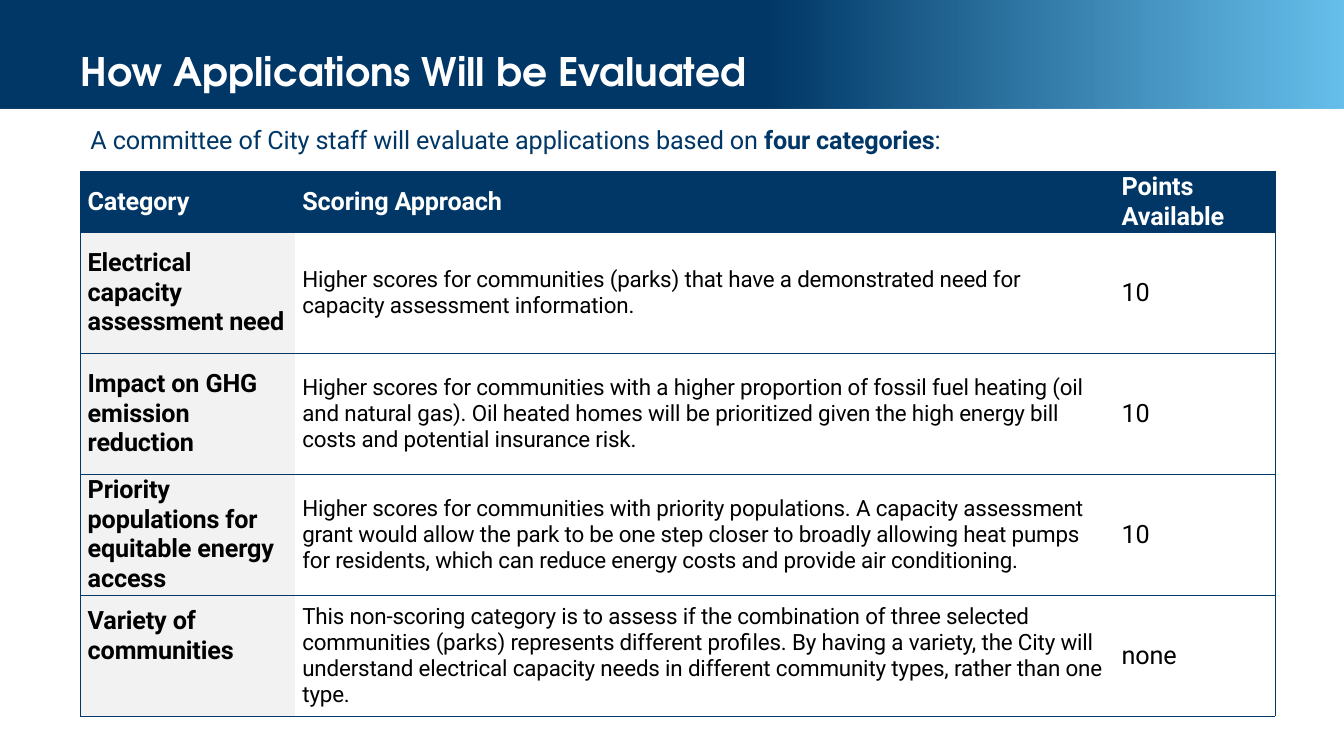
import pptx
import pptx.dml.color
import pptx.enum.shapes
import pptx.enum.text
import pptx.oxml
import pptx.oxml.ns
import pptx.util
from lxml import etree

Cm = pptx.util.Cm
Pt = pptx.util.Pt
RGBColor = pptx.dml.color.RGBColor
MIDDLE = pptx.enum.text.MSO_ANCHOR.MIDDLE
LEFT = pptx.enum.text.PP_ALIGN.LEFT

NAVY = RGBColor(0x01, 0x37, 0x66)
SKY = RGBColor(0x57, 0xB9, 0xE9)
GREY = RGBColor(0xF2, 0xF2, 0xF2)
WHITE = RGBColor(0xFF, 0xFF, 0xFF)
BLACK = RGBColor(0, 0, 0)

HEADERS = ["Category", "Scoring Approach", "Points Available"]
CRITERIA = [
    ("Electrical capacity assessment need",
     "Higher scores for communities (parks) that have a demonstrated need for "
     "capacity assessment information.", "10"),
    ("Impact on GHG emission reduction",
     "Higher scores for communities with a higher proportion of fossil fuel heating "
     "(oil and natural gas). Oil heated homes will be prioritized given the high "
     "energy bill costs and potential insurance risk.", "10"),
    ("Priority populations for equitable energy access",
     "Higher scores for communities with priority populations. A capacity assessment "
     "grant would allow the park to be one step closer to broadly allowing heat pumps "
     "for residents, which can reduce energy costs and provide air conditioning.", "10"),
    ("Variety of communities",
     "This non-scoring category is to assess if the combination of three selected "
     "communities (parks) represents different profiles. By having a variety, the City "
     "will understand electrical capacity needs in different community types, rather "
     "than one type.", "none"),
]


class Deck:
    heading_font = "TeX Gyre Adventor"
    body_font = "Roboto"

    def __init__(self):
        self.prs = pptx.Presentation()
        self.prs.slide_width, self.prs.slide_height = Cm(33.87), Cm(19.05)
        self.s = self.prs.slides.add_slide(self.prs.slide_layouts[5])

    def style(self, r, size, color, bold=False):
        r.font.name, r.font.size = self.body_font, Pt(size)
        r.font.color.rgb, r.font.bold = color, bold
        r._r.get_or_add_rPr().set("spc", "-10")

    def banner(self, width, height):
        sp = self.s.shapes.add_shape(
            pptx.enum.shapes.MSO_SHAPE.RECTANGLE, 0, 0, width, height)
        sp.shadow.inherit = False
        sp.line.fill.background()
        sp.fill.gradient()
        sp.fill.gradient_angle = 0
        for stop, position, color in zip(sp.fill.gradient_stops, (0.57, 1), (NAVY, SKY)):
            stop.position, stop.color.rgb = position, color
        last = sp._element.findall(".//" + pptx.oxml.ns.qn("a:srgbClr"))[-1]
        etree.SubElement(last, pptx.oxml.ns.qn("a:alpha"), val="90000")
        # Send behind the title
        self.s.shapes.title._element.addprevious(sp._element)

    def title(self, text, left, top, width, height):
        sp = self.s.shapes.title
        sp.left, sp.top, sp.width, sp.height = left, top, width, height
        tf = sp.text_frame
        tf.text = text
        tf.word_wrap, tf.vertical_anchor = True, MIDDLE
        tf.auto_size = pptx.enum.text.MSO_AUTO_SIZE.NONE
        tf.margin_left = tf.margin_right = 0
        tf.margin_top = tf.margin_bottom = Cm(0.2)
        p = tf.paragraphs[0]
        p.alignment, p.line_spacing = LEFT, 0.9
        font = p.runs[0].font
        font.name, font.size, font.bold = self.heading_font, Pt(28), True
        font.color.rgb = WHITE

    def text(self, parts, left, top, width, height):
        tf = self.s.shapes.add_textbox(left, top, width, height).text_frame
        tf.word_wrap = True
        for text, bold in parts:
            r = tf.paragraphs[0].add_run()
            r.text = text
            self.style(r, 18, NAVY, bold)

    def borders(self, cell, sides):
        """Draw navy rules on the named sides and clear the others."""
        tcPr = cell._tc.get_or_add_tcPr()
        for i, side in enumerate("LRTB"):
            paint = (f'<a:solidFill><a:srgbClr val="{NAVY}"/></a:solidFill>'
                     if side in sides else "<a:noFill/>")
            tcPr.insert(i, pptx.oxml.parse_xml(
                f'<a:ln{side} {pptx.oxml.ns.nsdecls("a")} w="{Pt(0.5)}">'
                f"{paint}</a:ln{side}>"))

    def table(self, rows, left, top, widths, heights):
        tbl = self.s.shapes.add_table(
            len(rows), len(widths), left, top, sum(widths), sum(heights)).table
        tbl.horz_banding = False
        for column, width in zip(tbl.columns, widths):
            column.width = width
        for i, (row, height) in enumerate(zip(rows, heights)):
            tbl.rows[i].height = height
            for j, text in enumerate(row):
                cell = tbl.cell(i, j)
                cell.text, cell.vertical_anchor = text, MIDDLE
                cell.margin_left = cell.margin_right = Cm(0.18)
                cell.margin_top = cell.margin_bottom = 0
                header = i == 0
                self.style(cell.text_frame.paragraphs[0].runs[0],
                           16 if j == 1 and not header else 18,
                           WHITE if header else BLACK, header or j == 0)
                if header or j == 0:
                    cell.fill.solid()
                    cell.fill.fore_color.rgb = NAVY if header else GREY
                else:
                    cell.fill.background()
                self.borders(cell, "TB" + {0: "L", len(widths) - 1: "R"}.get(j, ""))
        return tbl


def main():
    deck = Deck()
    margin = Cm(2.03)

    # Heading
    deck.banner(Cm(33.87), Cm(2.74))
    deck.title("How Applications Will be Evaluated", margin, Cm(1.04), Cm(25.5), Cm(1.65))

    # Introduction
    deck.text([("A committee of City staff will evaluate applications based on ", False),
               ("four categories", True), (":", False)],
              margin, Cm(3), Cm(25.5), Cm(1.02))

    # Scoring table
    tbl = deck.table([HEADERS] + CRITERIA, margin, Cm(4.32),
                     [Cm(5.41), Cm(20.65), Cm(4.04)],
                     [Cm(1.48)] + [Cm(3.05)] * len(CRITERIA))
    # The last category sits slightly above the middle
    tbl.cell(len(CRITERIA), 0).margin_bottom = Cm(1)

    deck.prs.save("out.pptx")


if __name__ == "__main__":
    main()
